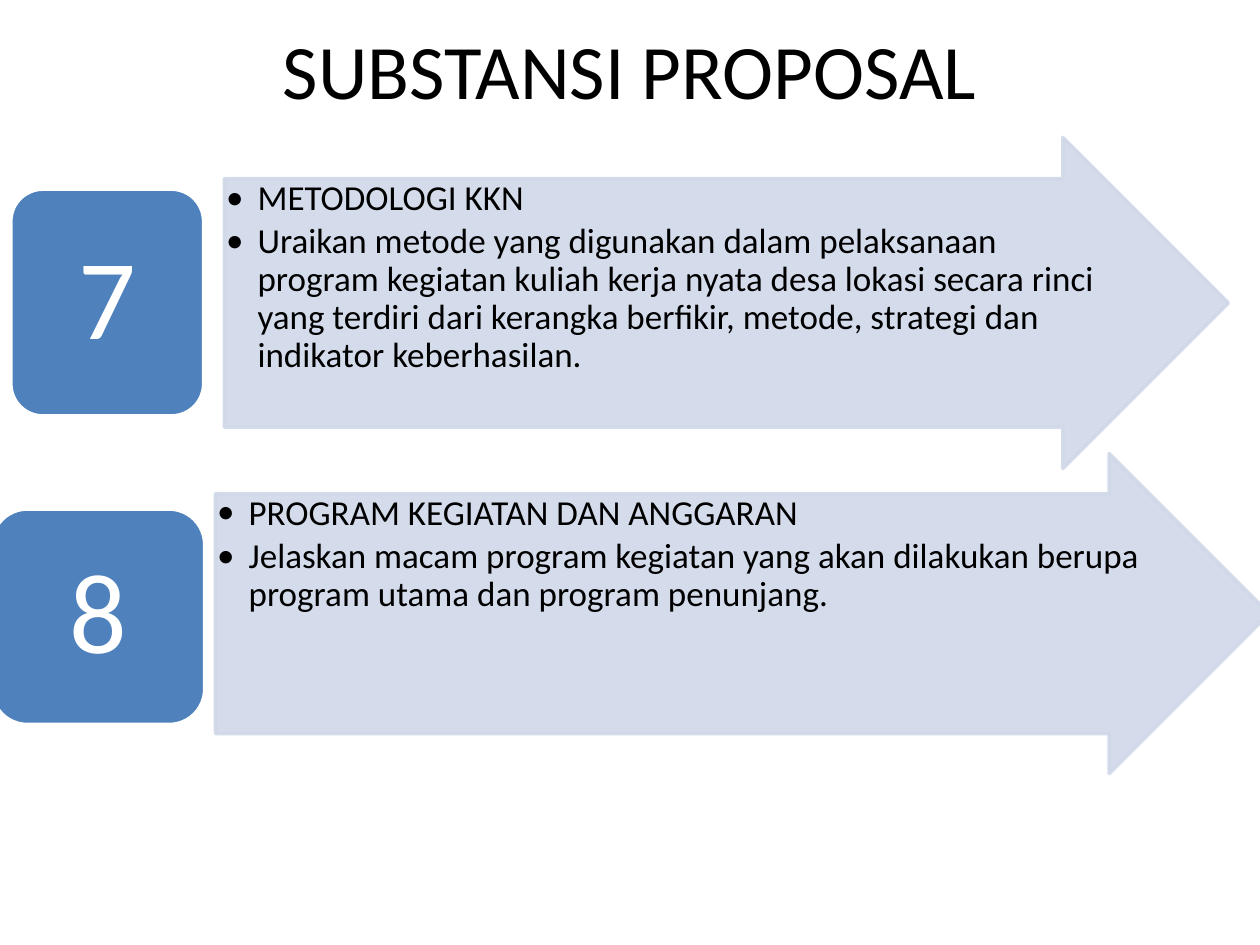
from dataclasses import dataclass

import pptx
import pptx.dml.color
import pptx.enum.shapes
import pptx.enum.text
import pptx.oxml
import pptx.oxml.ns
import pptx.util
from pptx.util import Pt


@dataclass(frozen=True)
class Theme:
    font: str = "Calibri"
    text: str = "000000"
    badge: str = "4F81BD"
    badge_text: str = "FFFFFF"
    arrow: str = "D0D8E8"
    arrow_opacity: int = 90
    title_size: float = 44
    number_size: float = 65
    body_size: float = 20
    outline: float = 2


@dataclass(frozen=True)
class Box:
    left: float
    top: float
    width: float
    height: float

    def lengths(self):
        return Pt(self.left), Pt(self.top), Pt(self.width), Pt(self.height)


THEME = Theme()
SHAPES = pptx.enum.shapes.MSO_SHAPE
ANCHOR = pptx.enum.text.MSO_ANCHOR
ALIGN = pptx.enum.text.PP_ALIGN

TITLE_BOX = Box(36, 0, 648, 78)
STEPS = [
    (
        Box(6.2, 78.5, 695.8, 189.3), Box(0, 29.6, 110.2, 129.6), 122, "7",
        [
            "METODOLOGI KKN",
            "Uraikan metode yang digunakan dalam pelaksanaan program kegiatan "
            "kuliah kerja nyata desa lokasi secara rinci yang terdiri dari "
            "kerangka berfikir, metode, strategi dan indikator keberhasilan.",
        ],
    ),
    (
        Box(-4.7, 259.2, 729.9, 182.9), Box(0, 31.7, 121.7, 123.1), 127.8, "8",
        [
            "PROGRAM KEGIATAN DAN ANGGARAN",
            "Jelaskan macam program kegiatan yang akan dilakukan berupa "
            "program utama dan program penunjang.",
        ],
    ),
]


def rgb(value):
    return pptx.dml.color.RGBColor.from_string(value)


def format_font(font, size, color):
    font.name = THEME.font
    font.size = Pt(size)
    font.color.rgb = rgb(color)


def set_opacity(shape, percent):
    for color in shape._element.spPr.iter(pptx.oxml.ns.qn("a:srgbClr")):
        alpha = pptx.oxml.parse_xml(
            f'<a:alpha {pptx.oxml.ns.nsdecls("a")} val="{percent * 1000}"/>'
        )
        color.append(alpha)


def add_bullet(paragraph, indent):
    properties = paragraph._p.get_or_add_pPr()
    properties.set("marL", str(Pt(indent)))
    properties.set("indent", str(-Pt(indent)))
    for element in (f'buFont {{}} typeface="{THEME.font}"', 'buChar {} char="•"'):
        declared = element.format(pptx.oxml.ns.nsdecls("a"))
        properties.append(pptx.oxml.parse_xml(f"<a:{declared}/>"))


def add_block(slide, kind, box, fill, line):
    shape = slide.shapes.add_shape(kind, *box.lengths())
    shape.shadow.inherit = False
    shape.fill.solid()
    shape.fill.fore_color.rgb = rgb(fill)
    shape.line.color.rgb = rgb(line)
    shape.line.width = Pt(THEME.outline)
    shape.text_frame.word_wrap = True
    return shape


def set_insets(frame, horizontal, vertical):
    frame.margin_left = frame.margin_right = Pt(horizontal)
    frame.margin_top = frame.margin_bottom = Pt(vertical)


def add_title(slide, box, text):
    title = slide.shapes.title
    title.left, title.top, title.width, title.height = box.lengths()
    frame = title.text_frame
    frame.text = text
    frame.vertical_anchor = ANCHOR.MIDDLE
    paragraph = frame.paragraphs[0]
    paragraph.alignment = ALIGN.CENTER
    format_font(paragraph.runs[0].font, THEME.title_size, THEME.text)


def add_arrow(slide, box, items):
    arrow = add_block(slide, SHAPES.RIGHT_ARROW, box, THEME.arrow, THEME.arrow)
    arrow.adjustments[0] = 0.75
    arrow.adjustments[1] = 0.5
    set_opacity(arrow, THEME.arrow_opacity)
    frame = arrow.text_frame
    set_insets(frame, 1, 1)
    frame.vertical_anchor = ANCHOR.TOP
    frame.text = "\n".join(items)
    for paragraph in frame.paragraphs:
        paragraph.level = 1
        paragraph.alignment = ALIGN.LEFT
        paragraph.line_spacing = 0.9
        paragraph.space_after = Pt(3)
        add_bullet(paragraph, 18)
        format_font(paragraph.runs[0].font, THEME.body_size, THEME.text)


def add_badge(slide, box, number):
    badge = add_block(
        slide, SHAPES.ROUNDED_RECTANGLE, box, THEME.badge, THEME.badge_text
    )
    frame = badge.text_frame
    set_insets(frame, 19.5, 10)
    frame.vertical_anchor = ANCHOR.MIDDLE
    frame.text = number
    paragraph = frame.paragraphs[0]
    paragraph.alignment = ALIGN.CENTER
    paragraph.line_spacing = 0.9
    format_font(paragraph.runs[0].font, THEME.number_size, THEME.badge_text)


def add_step(slide, box, badge, arrow_offset, number, items):
    arrow_box = Box(
        box.left + arrow_offset, box.top, box.width - arrow_offset, box.height
    )
    badge_box = Box(
        box.left + badge.left, box.top + badge.top, badge.width, badge.height
    )
    add_arrow(slide, arrow_box, items)
    add_badge(slide, badge_box, number)


def main():
    presentation = pptx.Presentation()
    presentation.slide_width = Pt(720)
    presentation.slide_height = Pt(540)
    slide = presentation.slides.add_slide(presentation.slide_layouts[5])
    add_title(slide, TITLE_BOX, "SUBSTANSI PROPOSAL")
    for step in STEPS:
        add_step(slide, *step)
    presentation.save("out.pptx")


if __name__ == "__main__":
    main()
